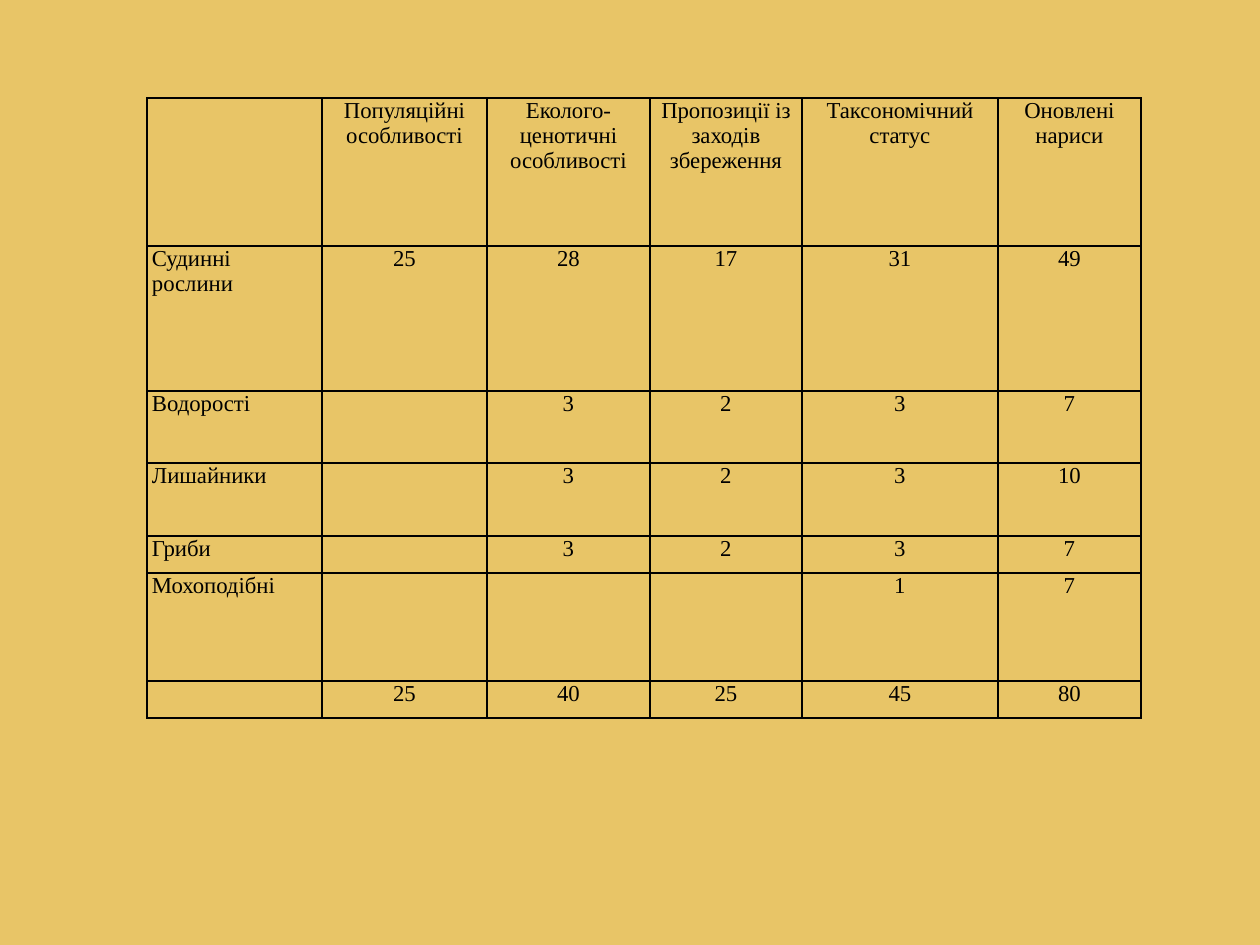
from lxml.etree import SubElement
from pptx import Presentation
from pptx.dml.color import RGBColor
from pptx.enum.text import MSO_ANCHOR, PP_ALIGN as Align
from pptx.oxml.ns import qn
from pptx.util import Emu, Pt

EMU_PER_PX = 914400 / 126
SAND = RGBColor(0xE8, 0xC5, 0x67)
BLACK = RGBColor(0, 0, 0)
FONT_SIZE = Pt(13)
FONT_FORMAT = {"name": "Times New Roman", "size": FONT_SIZE}
COLUMN_WIDTHS = [175, 165, 163, 152, 196, 143]
ROW_HEIGHTS = [148, 145, 72, 73, 37, 108, 37]
ROWS = [
    ["", "Популяційні особливості", "Еколого-ценотичні особливості",
     "Пропозиції із заходів\nзбереження", "Таксономічний статус", "Оновлені нариси"],
    ["Судинні рослини", "25", "28", "17", "31", "49"],
    ["Водорості", "", "3", "2", "3", "7"],
    ["Лишайники", "", "3", "2", "3", "10"],
    ["Гриби", "", "3", "2", "3", "7"],
    ["Мохоподібні", "", "", "", "1", "7"],
    ["", "25", "40", "25", "45", "80"],
]


def px(length):
    """Turn pixels into EMU."""
    return Emu(round(length * EMU_PER_PX))


def apply_format(target, values):
    """Set attributes of an object from a dict."""
    for name, value in values.items():
        setattr(target, name, value)


def add_borders(cell):
    """Draw a thin black line on each side of a cell."""
    properties = cell._tc.get_or_add_tcPr()
    for position, side in enumerate(("lnL", "lnR", "lnT", "lnB")):
        line = SubElement(properties, qn(f"a:{side}"), w=str(Pt(1)))
        fill = SubElement(line, qn("a:solidFill"))
        SubElement(fill, qn("a:srgbClr"), val=str(BLACK))
        properties.insert(position, line)


def fill_cell(cell, text, alignment):
    """Write and format the text of one table cell."""
    cell.text = text
    apply_format(cell, {
        "margin_left": px(5), "margin_right": px(5),
        "margin_top": 0, "margin_bottom": 0,
        "vertical_anchor": MSO_ANCHOR.TOP,
    })
    cell.fill.background()
    add_borders(cell)
    for paragraph in cell.text_frame.paragraphs:
        paragraph.alignment = alignment
        for run in paragraph.runs:
            apply_format(run.font, FONT_FORMAT)
            run.font.color.rgb = BLACK
        if not paragraph.runs:
            SubElement(paragraph._p, qn("a:endParaRPr"), sz=str(FONT_SIZE.centipoints))


def add_species_table(slide):
    """Add the table of species groups and their topics."""
    frame = slide.shapes.add_table(
        len(ROWS), len(COLUMN_WIDTHS), px(147), px(98),
        px(sum(COLUMN_WIDTHS)), px(sum(ROW_HEIGHTS)))
    table = frame.table
    apply_format(table, {"first_row": False, "horz_banding": False})
    for column, width in zip(table.columns, COLUMN_WIDTHS):
        column.width = px(width)
    for row, height, texts in zip(table.rows, ROW_HEIGHTS, ROWS):
        row.height = px(height)
        for index, (cell, text) in enumerate(zip(row.cells, texts)):
            fill_cell(cell, text, Align.CENTER if index else Align.LEFT)


def main():
    """Build the slide and save the presentation."""
    presentation = Presentation()
    apply_format(presentation, {"slide_width": px(1260), "slide_height": px(945)})
    slide = presentation.slides.add_slide(presentation.slide_layouts[6])
    background = slide.background.fill
    background.solid()
    background.fore_color.rgb = SAND
    add_species_table(slide)
    presentation.save("out.pptx")


if __name__ == "__main__":
    main()
